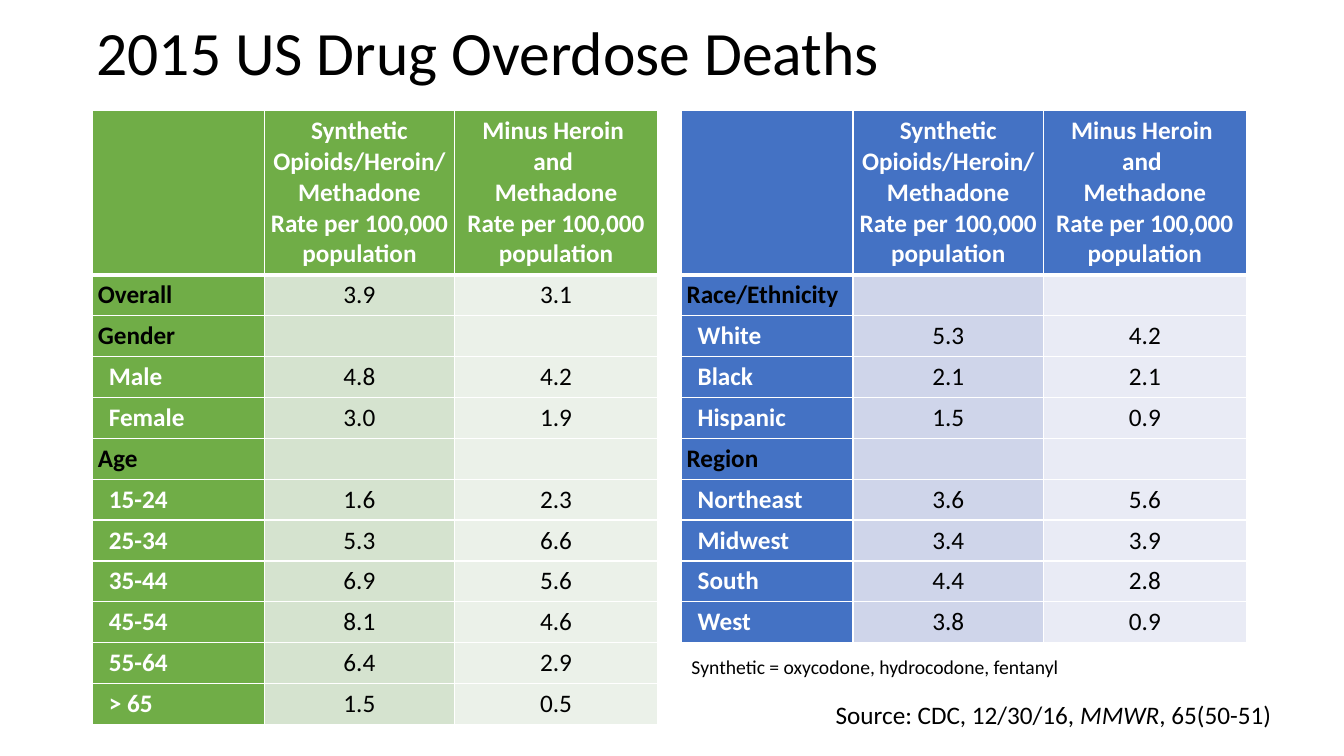
"""Build a slide with two tables of 2015 US drug overdose death rates."""
from lxml import etree
from pptx import Presentation
from pptx import util as u
from pptx.dml.color import RGBColor
from pptx.enum import text
from pptx.oxml import ns

COLORS = {
    "black": "000000", "white": "FFFFFF",
    "green": "70AD47", "green_mid": "D5E3CF", "green_pale": "EBF1E9",
    "blue": "4472C4", "blue_mid": "CFD5EA", "blue_pale": "E9EBF5",
}
COLUMN_WIDTHS = (1.7, 1.89, 2.01)
HEADER_HEIGHT, ROW_HEIGHT = 1.62, 0.4
RATE = "Rate per 100,000 population"
SYNTHETIC = "Synthetic Opioids/Heroin/Methadone\n" + RATE

TABLES = [
    {"left": 0.92, "hue": "green",
     "header": ("", SYNTHETIC, "Minus Heroin \nand \nMethadone\n" + RATE),
     "groups": ("Overall", "Gender", "Age"),
     "rows": [
         ("Overall", "3.9", "3.1"),
         ("Gender", "", ""),
         ("Male", "4.8", "4.2"),
         ("Female", "3.0", "1.9"),
         ("Age", "", ""),
         ("15-24", "1.6", "2.3"),
         ("25-34", "5.3", "6.6"),
         ("35-44", "6.9", "5.6"),
         ("45-54", "8.1", "4.6"),
         ("55-64", "6.4", "2.9"),
         ("> 65", "1.5", "0.5"),
     ]},
    {"left": 6.76, "hue": "blue",
     "header": ("", SYNTHETIC, "Minus Heroin \vand \nMethadone\n" + RATE),
     "groups": ("Race/Ethnicity", "Region"),
     "rows": [
         ("Race/Ethnicity", "", ""),
         ("White", "5.3", "4.2"),
         ("Black", "2.1", "2.1"),
         ("Hispanic", "1.5", "0.9"),
         ("Region", "", ""),
         ("Northeast", "3.6", "5.6"),
         ("Midwest", "3.4", "3.9"),
         ("South", "4.4", "2.8"),
         ("West", "3.8", "0.9"),
     ]},
]
TEXTS = [
    {"box": (0.86, 0.01, 11.5, 1.09), "size": 44, "wrap": True, "spacing": 0.9,
     "anchor": text.MSO_ANCHOR.MIDDLE, "runs": [("2015 US Drug Overdose Deaths", False)]},
    {"box": (8.19, 6.89, 4.63, 0.4), "size": 18, "wrap": False, "spacing": 1.0,
     "anchor": text.MSO_ANCHOR.TOP,
     "runs": [("Source: CDC, 12/30/16, ", False), ("MMWR", True), (", 65(50-51)", False)]},
    {"box": (6.76, 6.45, 3.88, 0.34), "size": 14, "wrap": False, "spacing": 1.0,
     "anchor": text.MSO_ANCHOR.TOP,
     "runs": [("Synthetic = oxycodone, hydrocodone, fentanyl", False)]},
]


def set_font(font, color, **values):
    font.color.rgb = RGBColor.from_string(COLORS[color])
    for name, value in {"name": "Calibri", **values}.items():
        setattr(font, name, value)


def set_borders(cell, widths):
    properties = cell._tc.get_or_add_tcPr()
    for position, (side, width) in enumerate(widths.items()):
        line = etree.Element(ns.qn("a:ln" + side), w=str(u.Pt(width)))
        fill = etree.SubElement(line, ns.qn("a:solidFill"))
        etree.SubElement(fill, ns.qn("a:srgbClr"), val=COLORS["white"])
        properties.insert(position, line)


presentation = Presentation()
presentation.slide_width = u.Inches(13.33)
presentation.slide_height = u.Inches(7.5)
slide = presentation.slides.add_slide(presentation.slide_layouts[6])

for data in TABLES:
    rows = [data["header"], *data["rows"]]
    height = HEADER_HEIGHT + ROW_HEIGHT * len(data["rows"])
    table = slide.shapes.add_table(
        len(rows), len(COLUMN_WIDTHS), u.Inches(data["left"]), u.Inches(1.1),
        u.Inches(sum(COLUMN_WIDTHS)), u.Inches(height)).table
    table.horz_banding = False
    for column, width in zip(table.columns, COLUMN_WIDTHS):
        column.width = u.Inches(width)
    for row_index, values in enumerate(rows):
        is_header = row_index == 0
        table.rows[row_index].height = u.Inches(HEADER_HEIGHT if is_header else ROW_HEIGHT)
        for column_index, value in enumerate(values):
            is_label = column_index == 0
            is_group = value in data["groups"]
            is_indented = is_label and not is_header and not is_group
            strong = is_header or is_label
            shade = "" if strong else ("_mid", "_pale")[column_index - 1]
            cell = table.cell(row_index, column_index)
            for side in ("left", "top", "right", "bottom"):
                setattr(cell, "margin_" + side, u.Inches(0.05))
            if is_indented:
                cell.margin_left = u.Inches(0.16)
            cell.fill.solid()
            cell.fill.fore_color.rgb = RGBColor.from_string(COLORS[data["hue"] + shade])
            set_borders(cell, {"L": 1, "R": 1, "T": 3 if row_index == 1 else 1,
                               "B": 3 if is_header else 1})
            cell.text_frame.text = value
            for paragraph in cell.text_frame.paragraphs:
                paragraph.alignment = text.PP_ALIGN.LEFT if is_label else text.PP_ALIGN.CENTER
                set_font(paragraph.font, "white" if is_header or is_indented else "black",
                         size=u.Pt(18), bold=strong)
                for run in paragraph.runs:
                    set_font(run.font, "white" if is_header or is_indented else "black",
                             size=u.Pt(18), bold=strong)

for item in TEXTS:
    frame = slide.shapes.add_textbox(*map(u.Inches, item["box"])).text_frame
    frame.word_wrap = item["wrap"]
    frame.vertical_anchor = item["anchor"]
    paragraph = frame.paragraphs[0]
    paragraph.line_spacing = item["spacing"]
    for words, italic in item["runs"]:
        run = paragraph.add_run()
        run.text = words
        set_font(run.font, "black", size=u.Pt(item["size"]), italic=italic)

presentation.save("out.pptx")
